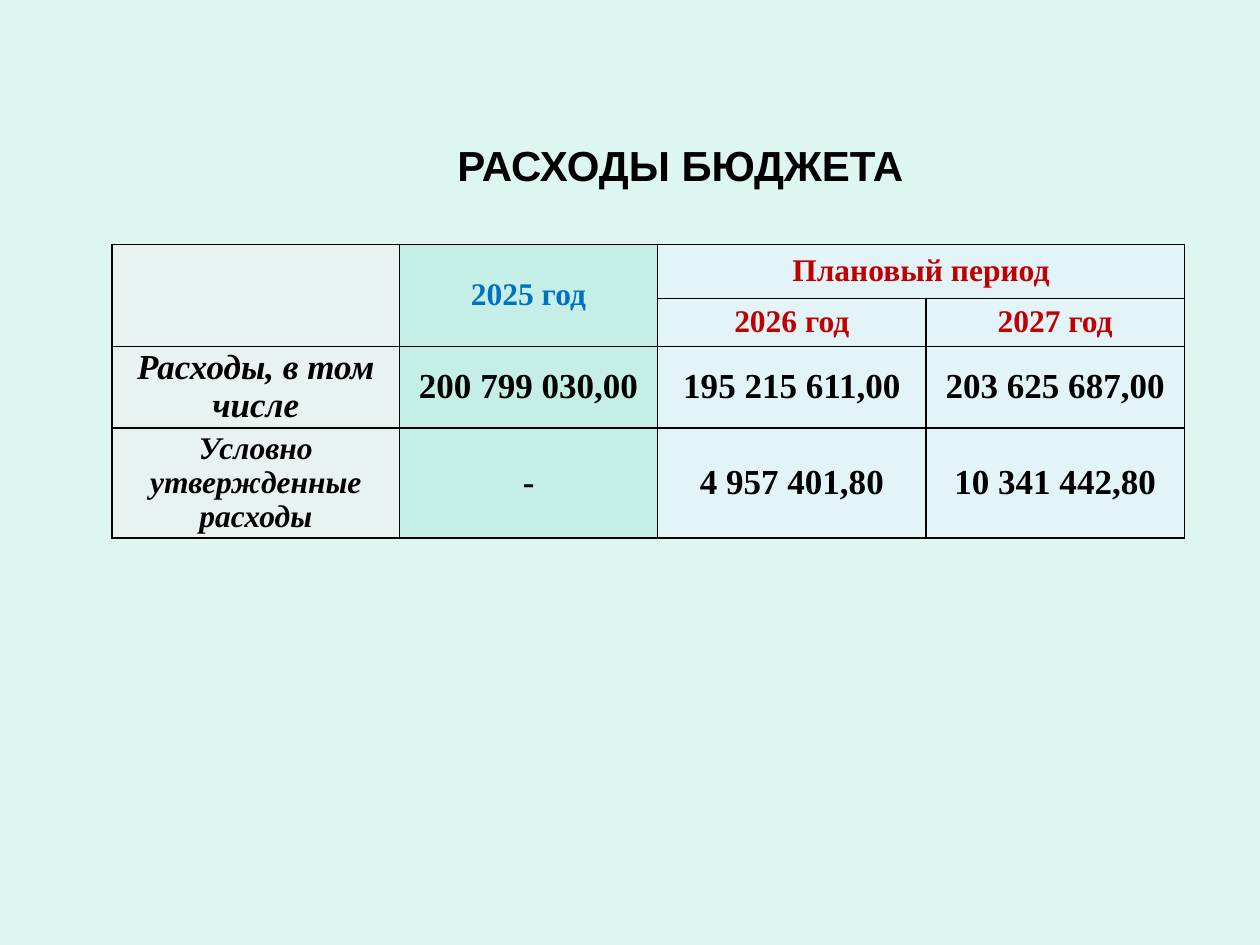
from lxml import etree
from pptx import Presentation
from pptx.dml.color import RGBColor
from pptx.enum import text
from pptx.oxml import ns
from pptx.util import Inches, Pt

COLORS = {
    "background": "DEF6F1", "ink": "000000", "current": "0070C0", "plan": "C00000",
    "label_fill": "F2F2F2", "current_fill": "8CE1CF", "plan_fill": "E8F4FF",
}
TITLE = "РАСХОДЫ БЮДЖЕТА"
ROWS = [
    ["", "2025 год", "Плановый период", ""],
    ["", "", "2026 год", "2027 год"],
    ["Расходы, в том числе", "200 799 030,00", "195 215 611,00", "203 625 687,00"],
    ["Условно утвержденные расходы", "-", "4 957 401,80", "10 341 442,80"],
]
HEADER_ROWS = 2
MERGES = [((0, 0), (1, 0)), ((0, 1), (1, 1)), ((0, 2), (0, 3))]
ROW_HEIGHTS = [0.43, 0.38, 0.62, 0.83]
# width, fill, fill opacity in percent, header text colour
COLUMNS = [
    (2.28, "label_fill", 53, "ink"),
    (2.05, "current_fill", 30, "current"),
    (2.13, "plan_fill", 50, "plan"),
    (2.05, "plan_fill", 50, "plan"),
]


def rgb(name):
    return RGBColor.from_string(COLORS[name])


def write(text_frame, content, font_name, size, color, italic=False):
    text_frame.text = content
    paragraph = text_frame.paragraphs[0]
    paragraph.alignment = text.PP_ALIGN.CENTER
    for run in paragraph.runs:
        run.font.name = font_name
        run.font.size = Pt(size)
        run.font.bold = True
        run.font.italic = italic
        run.font.color.rgb = rgb(color)
    return paragraph


def paint_cell(cell, fill, opacity):
    """Give the cell a translucent fill and thin borders on all sides."""
    cell.fill.solid()
    cell.fill.fore_color.rgb = rgb(fill)
    properties = cell._tc.get_or_add_tcPr()
    color = properties.find(".//" + ns.qn("a:srgbClr"))
    etree.SubElement(color, ns.qn("a:alpha"), val=str(opacity * 1000))
    for position, side in enumerate(("lnL", "lnR", "lnT", "lnB")):
        line = etree.Element(ns.qn("a:" + side), w=str(Pt(1)))
        solid = etree.SubElement(line, ns.qn("a:solidFill"))
        etree.SubElement(solid, ns.qn("a:srgbClr"), val=COLORS["ink"])
        properties.insert(position, line)


def add_title(slide):
    box = slide.shapes.add_textbox(Inches(1.4), Inches(1.07), Inches(8), Inches(0.47))
    frame = box.text_frame
    frame.word_wrap = True
    frame.vertical_anchor = text.MSO_ANCHOR.MIDDLE
    write(frame, TITLE, "Arial", 24, "ink")


def add_budget_table(slide):
    width = sum(column[0] for column in COLUMNS)
    table = slide.shapes.add_table(
        len(ROWS), len(COLUMNS), Inches(0.89), Inches(1.94),
        Inches(width), Inches(sum(ROW_HEIGHTS))).table
    table.horz_banding = False
    for row, height in zip(table.rows, ROW_HEIGHTS):
        row.height = Inches(height)
    for c, (width, fill, opacity, header_color) in enumerate(COLUMNS):
        table.columns[c].width = Inches(width)
        for r, values in enumerate(ROWS):
            cell = table.cell(r, c)
            cell.margin_left = cell.margin_right = Inches(0.07)
            cell.margin_top = cell.margin_bottom = 0
            cell.vertical_anchor = text.MSO_ANCHOR.MIDDLE
            header = r < HEADER_ROWS
            last_label = c == 0 and r == len(ROWS) - 1
            paragraph = write(
                cell.text_frame, values[c], "Times New Roman",
                18 if header or last_label else 20,
                header_color if header else "ink", italic=c == 0)
            paragraph.line_spacing = 0.97
            paint_cell(cell, fill, opacity)
    for first, last in MERGES:
        table.cell(*first).merge(table.cell(*last))


def main():
    presentation = Presentation()
    presentation.slide_width = Inches(10)
    presentation.slide_height = Inches(7.5)
    slide = presentation.slides.add_slide(presentation.slide_layouts[6])
    slide.background.fill.solid()
    slide.background.fill.fore_color.rgb = rgb("background")
    add_title(slide)
    add_budget_table(slide)
    presentation.save("out.pptx")


if __name__ == "__main__":
    main()
